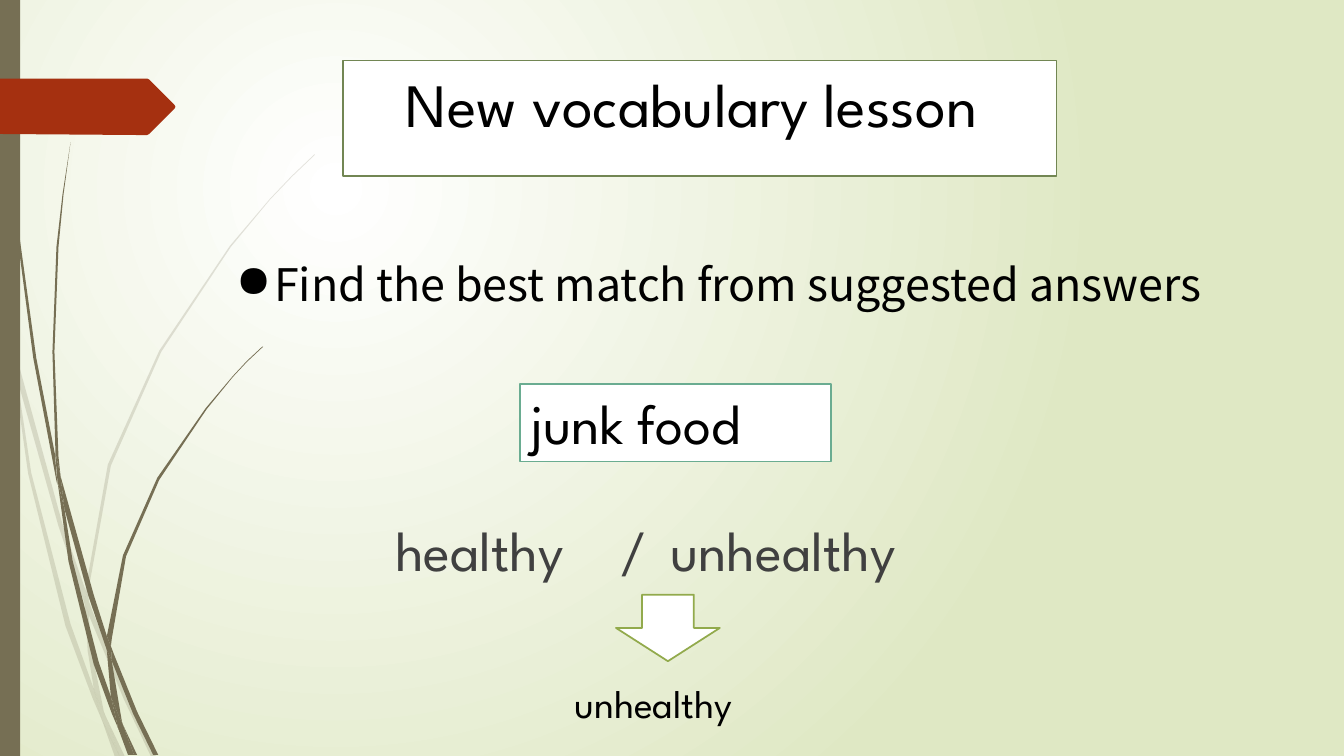
from dataclasses import dataclass

from pptx import Presentation
from pptx import util as u
from pptx.dml.color import RGBColor
from pptx.enum import shapes, text
from pptx.oxml import parse_xml
from pptx.oxml.ns import nsdecls


@dataclass(frozen=True)
class Theme:
    white: str = "FFFFFF"
    black: str = "000000"
    grey: str = "404040"
    meadow: str = "DFE8C4"
    stem: str = "766F54"
    ribbon: str = "A53010"
    title_line: str = "728653"
    word_line: str = "6AAC91"
    arrow_line: str = "92AA4C"
    line_width: float = 1.25
    display: str = "League Spartan"
    plain: str = "Noto Sans CJK KR"
    title_size: int = 44
    word_size: int = 40
    task_size: int = 32
    answer_size: int = 28


# Grass outlines as x, y pairs in hundredths of an inch
PALE_BLADES = [
    (11, 350, 9, 322, 0, 282, 0, 299, 10, 344),
    (58, 522, 84, 599, 85, 586, 62, 520, 14, 345, 17, 376),
    (92, 607, 88, 596, 88, 610, 123, 694, 150, 751, 155, 751, 127, 692),
    (119, 751, 124, 751, 105, 711),
    (93, 683, 70, 619, 31, 469, 17, 376, 11, 350, 28, 470, 65, 621,
     92, 693, 101, 714, 99, 707),
    (84, 599, 87, 646, 93, 683, 96, 692, 105, 711, 103, 706, 91, 646,
     88, 610, 88, 608),
    (88, 584, 110, 462, 160, 349, 229, 245, 268, 198, 290, 175, 312, 154,
     312, 153, 289, 175, 268, 197, 228, 244, 158, 348, 107, 461, 85, 584,
     85, 586, 88, 596),
    (101, 714, 114, 751, 119, 751),
    (88, 608, 88, 610, 88, 596, 85, 586, 84, 599),
    (96, 692, 93, 683, 99, 707, 101, 714, 119, 751, 105, 711),
]
DARK_BLADES = [
    (7, 110, 17, 233, 33, 355, 56, 477, 57, 481, 55, 457, 55, 453, 36, 355,
     19, 232, 8, 109, 5, 48, 4, 0, 3, 0, 4, 48),
    (88, 592, 106, 645, 106, 633, 106, 631, 93, 590, 60, 472, 64, 505),
    (113, 649, 110, 641, 111, 656, 132, 708, 152, 749, 157, 749, 136, 706),
    (110, 691, 98, 657, 72, 556, 64, 505, 57, 477, 68, 557, 93, 659,
     111, 708, 117, 722, 116, 717),
    (60, 472, 58, 453, 54, 349, 58, 245, 63, 193, 70, 141, 62, 193, 56, 245,
     52, 349, 55, 449),
    (133, 749, 136, 749, 122, 719),
    (57, 477, 64, 505, 60, 472, 55, 449, 55, 453),
    (111, 633, 125, 552, 158, 476, 205, 406, 231, 374, 245, 359, 261, 344,
     260, 344, 245, 358, 231, 373, 204, 405, 156, 474, 122, 551, 106, 631,
     110, 641),
    (117, 722, 127, 749, 131, 749),
    (106, 645, 110, 691, 116, 706, 122, 719, 121, 716, 111, 656, 109, 651),
    (106, 645, 109, 651, 111, 656, 110, 641, 106, 631, 106, 633),
    (116, 706, 110, 691, 116, 717, 117, 722, 130, 749, 133, 749, 122, 719),
]
RIBBON = (173, 108, 148, 133, 146, 134, 136, 134, 0, 133, 0, 78, 136, 78,
          146, 78, 148, 79, 173, 104, 174, 106)


class LessonSlide:
    def __init__(self, prs, theme):
        self.theme = theme
        self.slide = prs.slides.add_slide(prs.slide_layouts[5])

    def background(self, centre, edge):
        fill = self.slide.background.fill
        fill.gradient()
        for stop, colour in zip(fill.gradient_stops, (centre, edge)):
            stop.color.rgb = RGBColor.from_string(colour)
        linear = self.slide.element.xpath(".//a:lin")[0]
        linear.getparent().replace(linear, parse_xml(
            f'<a:path {nsdecls("a")} path="circle"><a:fillToRect l="50000" '
            't="50000" r="100000" b="100000"/></a:path>'))

    def paint(self, shape, fill, line=None):
        shape.shadow.inherit = False
        shape.fill.solid()
        shape.fill.fore_color.rgb = RGBColor.from_string(fill)
        if line:
            shape.line.color.rgb = RGBColor.from_string(line)
            shape.line.width = u.Pt(self.theme.line_width)
        else:
            shape.line.fill.background()

    def outline(self, coords, fill, opacity=100):
        points = list(zip(coords[::2], coords[1::2]))
        builder = self.slide.shapes.build_freeform(
            *points[0], scale=u.Inches(0.01))
        builder.add_line_segments(points[1:], close=True)
        shape = builder.convert_to_shape()
        self.paint(shape, fill)
        if opacity < 100:
            colour = shape.element.xpath("./p:spPr/a:solidFill/a:srgbClr")[0]
            colour.append(parse_xml(
                f'<a:alpha {nsdecls("a")} val="{opacity * 1000}"/>'))

    def preset(self, kind, box, fill, line=None):
        shape = self.slide.shapes.add_shape(kind, *map(u.Inches, box))
        self.paint(shape, fill, line)
        return shape

    def textbox(self, box):
        return self.slide.shapes.add_textbox(*map(u.Inches, box))

    def title(self, box, words, line):
        heading = self.slide.shapes.title
        for side, length in zip(("left", "top", "width", "height"), box):
            setattr(heading, side, u.Inches(length))
        self.paint(heading, self.theme.white, line)
        self.set_text(heading, words, self.theme.title_size,
                      alignment=text.PP_ALIGN.CENTER)

    def set_text(self, shape, words, size, colour=None, font=None, grow=False,
                 wrap=True, bullet=None, indent=0, tabs=(),
                 **paragraph_format):
        frame = shape.text_frame
        frame_format = {
            "word_wrap": wrap,
            "vertical_anchor": text.MSO_ANCHOR.TOP,
            "auto_size": (text.MSO_AUTO_SIZE.SHAPE_TO_FIT_TEXT if grow
                          else text.MSO_AUTO_SIZE.NONE),
        }
        for name, value in frame_format.items():
            setattr(frame, name, value)
        paragraph = frame.paragraphs[0]
        paragraph.text = words
        props = paragraph._p.get_or_add_pPr()
        if bullet:
            props.set("marL", str(u.Inches(indent)))
            props.set("indent", str(-u.Inches(indent)))
            props.append(parse_xml(
                f'<a:buChar {nsdecls("a")} char="{bullet}"/>'))
        if tabs:
            stops = "".join(f'<a:tab pos="{u.Inches(stop)}" algn="l"/>'
                            for stop in tabs)
            props.append(parse_xml(
                f'<a:tabLst {nsdecls("a")}>{stops}</a:tabLst>'))
        paragraph_format = {"alignment": text.PP_ALIGN.LEFT,
                            **paragraph_format}
        for name, value in paragraph_format.items():
            setattr(paragraph, name, value)
        run_font = paragraph.runs[0].font
        font_format = {"size": u.Pt(size), "name": font or self.theme.display}
        for name, value in font_format.items():
            setattr(run_font, name, value)
        run_font.color.rgb = RGBColor.from_string(colour or self.theme.black)


def main():
    prs = Presentation()
    prs.slide_width, prs.slide_height = u.Inches(13.33), u.Inches(7.5)
    theme = Theme()
    lesson = LessonSlide(prs, theme)

    # Backdrop: grass, side bar and ribbon
    lesson.background(theme.white, theme.meadow)
    for blades, opacity in ((PALE_BLADES, 20), (DARK_BLADES, 100)):
        for blade in blades:
            lesson.outline(blade, theme.stem, opacity)
    rectangle = shapes.MSO_SHAPE.RECTANGLE
    lesson.preset(rectangle, (0, 0, 0.2, 7.5), theme.stem)
    lesson.outline(RIBBON, theme.ribbon)

    # Title
    lesson.title((3.4, 0.6, 7.08, 1.15), "New vocabulary lesson ",
                 theme.title_line)

    # Choices, word and answer
    choices = lesson.textbox((3.82, 5.07, 6.26, 1.13))
    lesson.set_text(choices, "healthy\t/\tunhealthy", theme.word_size,
                    theme.grey, tabs=(2.24, 2.73))
    word = lesson.preset(rectangle, (5.16, 3.81, 3.08, 0.77),
                         theme.white, theme.word_line)
    lesson.set_text(word, "junk food", theme.word_size, grow=True)
    answer = lesson.textbox((5.6, 6.69, 2.4, 0.57))
    lesson.set_text(answer, "unhealthy", theme.answer_size, grow=True)
    lesson.preset(shapes.MSO_SHAPE.DOWN_ARROW, (6.11, 5.9, 1.03, 0.66),
                  theme.white, theme.arrow_line)

    # Task
    task = lesson.textbox((2.24, 2.46, 9.81, 0.63))
    lesson.set_text(task, "Find the best match from suggested answers",
                    theme.task_size, font=theme.plain, grow=True, wrap=False,
                    bullet="●", indent=0.38, line_spacing=1.07,
                    space_after=u.Pt(8), alignment=text.PP_ALIGN.JUSTIFY)

    prs.save("out.pptx")


if __name__ == "__main__":
    main()
